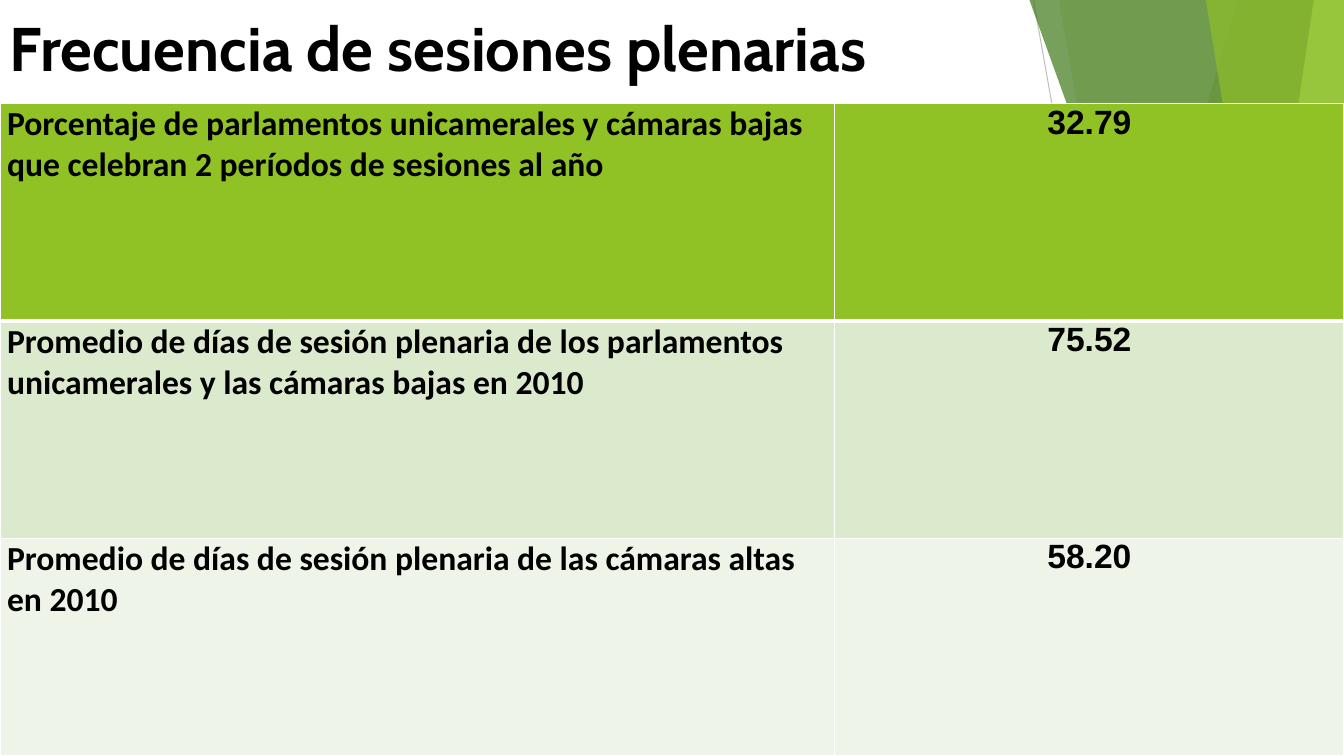
"""Build a slide with a table on how often parliaments hold plenary sessions."""
from lxml.etree import SubElement as Sub
from pptx import Presentation as Deck
from pptx.dml.color import RGBColor as Rgb
from pptx.enum.shapes import MSO_CONNECTOR as Link
from pptx.enum.text import MSO_ANCHOR as Anchor, PP_ALIGN as Align
from pptx.oxml.ns import qn
from pptx.util import Inches, Pt

theme = {
    "ink": "000000", "edge": "FFFFFF", "hair": "BFBFBF",
    "rows": ["90C226", "DBE9CD", "EEF4E8"],
    "head": ("Cabin", 44), "label": ("Calibri", 24), "value": ("Arial", 24),
}


def write(frame, text, style, align=Align.LEFT):
    para = frame.paragraphs[0]
    para.alignment = align
    run = para.add_run()
    run.text = text
    run.font.name, size = theme[style]
    run.font.size = Pt(size)
    run.font.bold = True
    run.font.color.rgb = Rgb.from_string(theme["ink"])


def paint(fill, color, alpha=100):
    fill.solid()
    fill.fore_color.rgb = Rgb.from_string(color)
    if alpha < 100:
        tint = fill.fore_color._xFill.find(qn("a:srgbClr"))
        Sub(tint, qn("a:alpha"), val=str(alpha * 1000))


deck = Deck()
deck.slide_width, deck.slide_height = Inches(13.33), Inches(7.5)
wide, high = deck.slide_width, deck.slide_height
slide = deck.slides.add_slide(deck.slide_layouts[6])
shapes = slide.shapes

hair = shapes.add_connector(Link.STRAIGHT, Inches(10.25), 0, Inches(11.58), high)
hair.line.color.rgb = Rgb.from_string(theme["hair"])
hair.line.width = Pt(0.75)
Sub(hair._element.spPr, qn("a:effectLst"))

bands = [
    (12.28, 10.04, "90C226", 30),
    (10.5, 11.83, "90C226", 20),
    (10.21, 12.91, "3F7819", 70),
    (13.03, 11.92, "C0E474", 70),
    (11.96, 13.18, "90C226", 65),
]
for top, base, color, alpha in bands:
    pen = shapes.build_freeform(Inches(top), 0)
    pen.add_line_segments([(wide, 0), (wide, high), (Inches(base), high)])
    band = pen.convert_to_shape()
    band.shadow.inherit = False
    band.line.fill.background()
    paint(band.fill, color, alpha)

title = shapes.add_textbox(0, 0, wide, Inches(0.92)).text_frame
title.word_wrap = True
title.vertical_anchor = Anchor.MIDDLE
write(title, "Frecuencia de sesiones plenarias", "head")

data = [
    ("Porcentaje de parlamentos unicamerales y cámaras bajas "
     "que celebran 2 períodos de sesiones al año", "32.79"),
    ("Promedio de días de sesión plenaria de los parlamentos "
     "unicamerales y las cámaras bajas en 2010", "75.52"),
    ("Promedio de días de sesión plenaria de las cámaras altas en 2010", "58.20"),
]
start = Inches(1.03)
table = shapes.add_table(len(data), 2, 0, start, wide, high - start).table
table.columns[0].width = Inches(8.28)
table.columns[1].width = wide - Inches(8.28)
kinds = [("label", Align.LEFT), ("value", Align.CENTER)]
for i, (line, color) in enumerate(zip(data, theme["rows"])):
    for j, (text, (style, align)) in enumerate(zip(line, kinds)):
        cell = table.cell(i, j)
        cell.margin_left = cell.margin_right = Inches(0.07)
        cell.margin_top = cell.margin_bottom = 0
        write(cell.text_frame, text, style, align)
        props = cell._tc.get_or_add_tcPr()
        for side in "LRTB":
            thick = (i, side) in [(0, "B"), (1, "T")]
            edge = Sub(props, qn("a:ln" + side), w=str(Pt(3 if thick else 1)))
            solid = Sub(edge, qn("a:solidFill"))
            Sub(solid, qn("a:srgbClr"), val=theme["edge"])
        paint(cell.fill, color)

deck.save("out.pptx")
